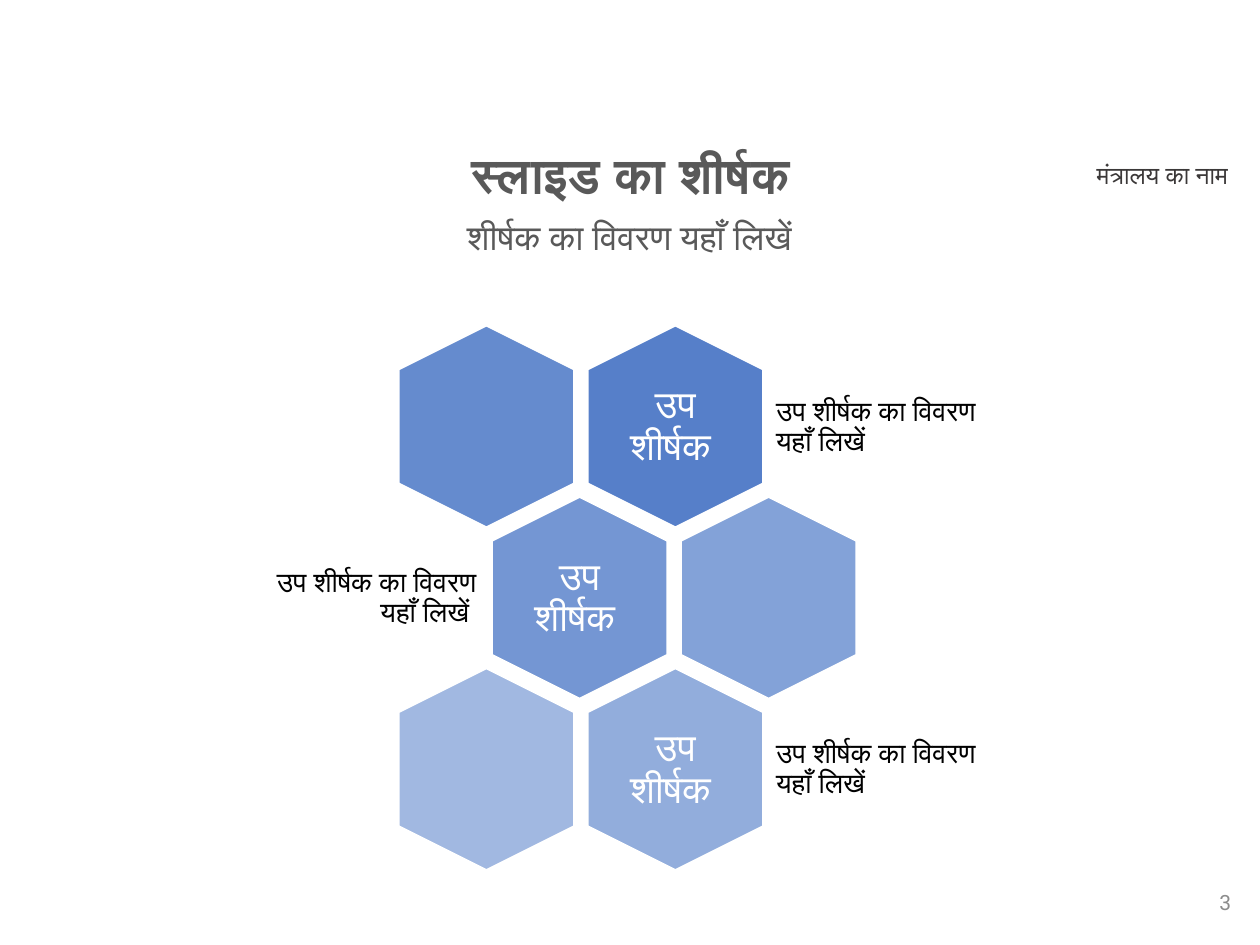
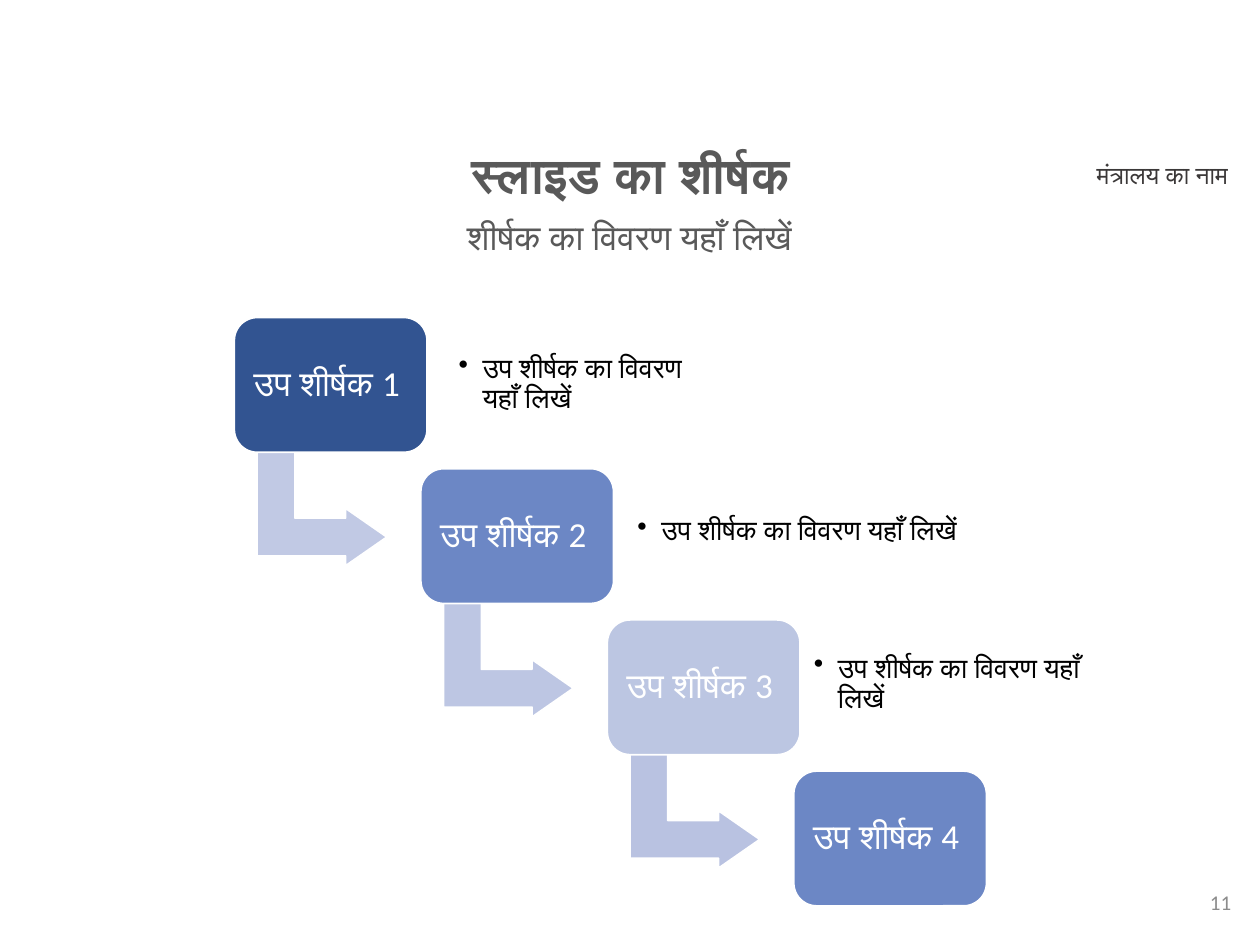
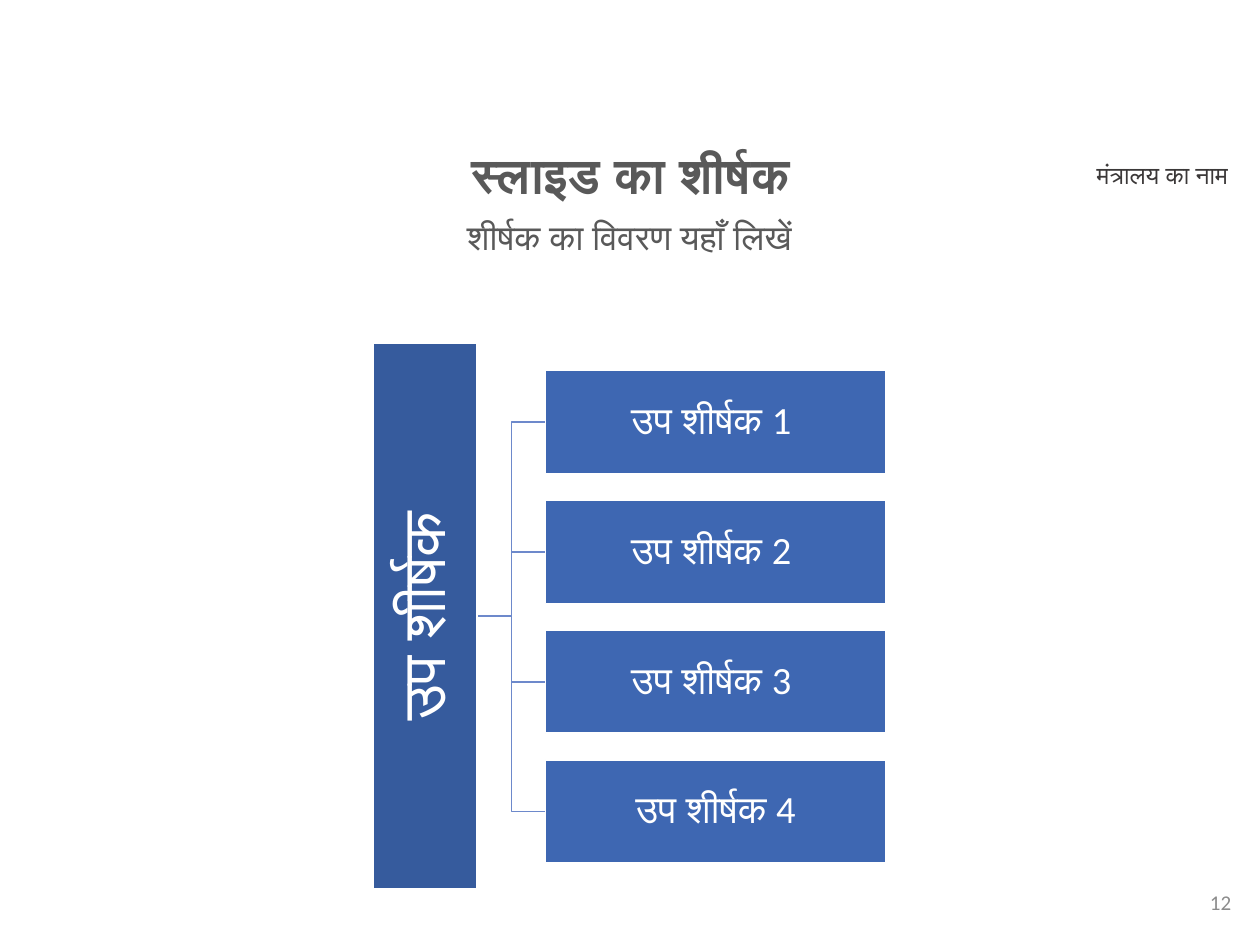
from lxml import etree
from pptx import Presentation
from pptx import util as u
from pptx.dml.color import RGBColor
from pptx.enum import shapes, text
from pptx.oxml import ns

# Shared colours
WHITE = RGBColor(0xFF, 0xFF, 0xFF)
BLACK = RGBColor(0x00, 0x00, 0x00)
TITLE_GREY = RGBColor(0x59, 0x59, 0x59)
MINISTRY_GREY = RGBColor(0x3B, 0x38, 0x38)
NUMBER_GREY = RGBColor(0x8C, 0x8C, 0x8C)
HEXAGON_BLUE = RGBColor(0x44, 0x72, 0xC4)
NAVY = RGBColor(0x32, 0x54, 0x91)
MID_BLUE = RGBColor(0x6C, 0x87, 0xC5)
PALE_BLUE = RGBColor(0xBC, 0xC6, 0xE2)
ARROW_BLUES = [RGBColor(0xC1, 0xC9, 0xE4), RGBColor(0xBD, 0xC6, 0xE3),
               RGBColor(0xB9, 0xC2, 0xE1)]
BAR_BLUE = RGBColor(0x36, 0x5B, 0x9D)
BRANCH_BLUE = RGBColor(0x3E, 0x67, 0xB2)
BRACKET_BLUE = RGBColor(0x6D, 0x89, 0xCB)

# Shared wording
DESCRIPTION = "उप शीर्षक का विवरण यहाँ लिखें"
SUBTITLE = "उप शीर्षक"

LEFT, CENTER, RIGHT = (text.PP_ALIGN.LEFT, text.PP_ALIGN.CENTER,
                       text.PP_ALIGN.RIGHT)
TOP, MIDDLE = text.MSO_ANCHOR.TOP, text.MSO_ANCHOR.MIDDLE
SHAPE = shapes.MSO_SHAPE


class Deck:
    """Holds the shared style and the slide being built."""

    font = "Calibri"

    def __init__(self):
        self.presentation = Presentation()
        self.presentation.slide_width = u.Inches(10)
        self.presentation.slide_height = u.Inches(7.5)
        self.slide = None

    def new_slide(self, number, number_font=None):
        layout = self.presentation.slide_layouts[6]
        self.slide = self.presentation.slides.add_slide(layout)
        self.label("मंत्रालय का नाम", 8.41, 1.22, 1.63, 0.34, 14,
                   MINISTRY_GREY, CENTER, anchor=TOP, spacing=1)
        self.label(str(number), 7.62, 6.96, 2.25, 0.4, 12, NUMBER_GREY,
                   RIGHT, spacing=1, font=number_font)
        self.label("शीर्षक का विवरण यहाँ लिखें", 1.46, 1.7, 7.07, 0.63, 20,
                   TITLE_GREY, CENTER, anchor=TOP)
        self.label("स्लाइड का शीर्षक", 1.86, 1.15, 6.29, 0.47, 28,
                   TITLE_GREY, CENTER, anchor=TOP, bold=True)

    def set_words(self, shape, words, size, color, align=CENTER,
                  anchor=MIDDLE, inset=None, spacing=0.9, bold=False,
                  bullet=False, font=None):
        frame = shape.text_frame
        frame.text = words
        frame.word_wrap = True
        frame.vertical_anchor = anchor
        if inset is not None:
            frame.margin_left = frame.margin_right = u.Inches(inset)
            frame.margin_top = frame.margin_bottom = u.Inches(inset)
        paragraph = frame.paragraphs[0]
        paragraph.alignment = align
        paragraph.line_spacing = spacing
        if bullet:
            self.add_bullet(paragraph)
        for run in paragraph.runs:
            run.font.name = font or self.font
            run.font.size = u.Pt(size)
            run.font.bold = bold
            run.font.color.rgb = color

    def add_bullet(self, paragraph):
        properties = paragraph._p.get_or_add_pPr()
        indent = u.Inches(0.19)
        properties.set("marL", str(indent))
        properties.set("indent", str(-indent))
        mark = etree.SubElement(properties, ns.qn("a:buChar"))
        mark.set("char", "•")

    def label(self, words, left, top, width, height, size, color,
              align=LEFT, **style):
        box = self.slide.shapes.add_textbox(
            u.Inches(left), u.Inches(top), u.Inches(width), u.Inches(height))
        self.set_words(box, words, size, color, align, **style)

    def block(self, kind, left, top, width, height, fill, rotation=0,
              adjustments=(), opacity=None):
        shape = self.slide.shapes.add_shape(
            kind, u.Inches(left), u.Inches(top),
            u.Inches(width), u.Inches(height))
        shape.shadow.inherit = False
        shape.rotation = rotation
        for index, value in enumerate(adjustments):
            shape.adjustments[index] = value
        shape.fill.solid()
        shape.fill.fore_color.rgb = fill
        if opacity is not None:
            color = shape._element.spPr.find(
                ns.qn("a:solidFill") + "/" + ns.qn("a:srgbClr"))
            alpha = etree.SubElement(color, ns.qn("a:alpha"))
            alpha.set("val", str(opacity * 1000))
        shape.line.color.rgb = WHITE
        shape.line.width = u.Pt(1)
        return shape

    def bracket(self, points):
        corners = [(u.Inches(x), u.Inches(y)) for x, y in points]
        builder = self.slide.shapes.build_freeform(*corners[0])
        builder.add_line_segments(corners[1:], close=False)
        shape = builder.convert_to_shape()
        shape.shadow.inherit = False
        shape.fill.background()
        shape.line.color.rgb = BRACKET_BLUE
        shape.line.width = u.Pt(1)


def hexagon_slide(deck):
    deck.new_slide(3, "Roboto")
    # row, column, opacity, labelled
    cells = [(0, 1, 90, True), (0, 0, 82, False), (1, 0, 74, True),
             (1, 1, 66, False), (2, 1, 58, True), (2, 0, 50, False)]
    for row, column, opacity, labelled in cells:
        odd = row % 2
        left = 3.06 + 1.5 * column + 0.74 * odd
        top = 2.69 + 1.36 * row
        deck.block(SHAPE.HEXAGON, left, top, 1.6, 1.39, HEXAGON_BLUE,
                   rotation=90, adjustments=[0.25], opacity=opacity)
        if not labelled:
            continue
        deck.label(SUBTITLE + " ", left + 0.32, top + 0.15, 0.96, 1.1, 22,
                   WHITE, CENTER, inset=0.09)
        # Odd rows carry their description on the left
        if odd:
            deck.label(DESCRIPTION + " ", left - 1.68, top + 0.22, 1.73, 0.96,
                       16, BLACK, RIGHT, inset=0.07)
        else:
            deck.label(DESCRIPTION, left + 1.53, top + 0.22, 1.78, 0.96,
                       16, BLACK, inset=0.07)


def staircase_slide(deck):
    deck.new_slide(11)
    step_fills = [NAVY, MID_BLUE, PALE_BLUE, MID_BLUE]
    # left, top, width of the text beside each step
    descriptions = [(3.56, 2.62, 2.01), (4.98, 3.79, 2.96), (6.38, 5, 2.47)]
    for index, fill in enumerate(step_fills):
        left, top = 1.86 + 1.48 * index, 2.52 + 1.2 * index
        if index < len(ARROW_BLUES):
            deck.block(SHAPE.BENT_UP_ARROW, left + 0.24, top + 1, 0.91, 1.03,
                       ARROW_BLUES[index], rotation=90,
                       adjustments=[0.33, 0.25, 0.36])
        step = deck.block(SHAPE.ROUNDED_RECTANGLE, left, top, 1.53, 1.07, fill,
                          adjustments=[0.17])
        deck.set_words(step, f"{SUBTITLE} {index + 1} ", 20, WHITE, inset=0.08)
        if index < len(descriptions):
            text_left, text_top, width = descriptions[index]
            deck.label(DESCRIPTION, text_left, text_top, width, 0.86, 16,
                       BLACK, inset=0.08, bullet=True)


def branch_slide(deck):
    deck.new_slide(12)
    branch_tops = [2.94 + 1.03 * index for index in range(4)]
    # Brackets from the bar to each branch
    for top in reversed(branch_tops):
        middle = top + 0.41
        deck.bracket([(3.79, 4.89), (4.06, 4.89), (4.06, middle),
                      (4.33, middle)])
    # Upright bar
    bar = deck.block(SHAPE.RECTANGLE, 1.21, 4.48, 4.33, 0.82, BAR_BLUE,
                     rotation=270)
    deck.set_words(bar, SUBTITLE, 35, WHITE, inset=0.02)
    # Branches
    endings = ["1 ", "2 ", "3 ", "4"]
    for top, ending in zip(branch_tops, endings):
        branch = deck.block(SHAPE.RECTANGLE, 4.33, top, 2.7, 0.82, BRANCH_BLUE)
        deck.set_words(branch, f"{SUBTITLE} {ending}", 22, WHITE, inset=0.02)


def main():
    deck = Deck()
    hexagon_slide(deck)
    staircase_slide(deck)
    branch_slide(deck)
    deck.presentation.save("out.pptx")


if __name__ == "__main__":
    main()
